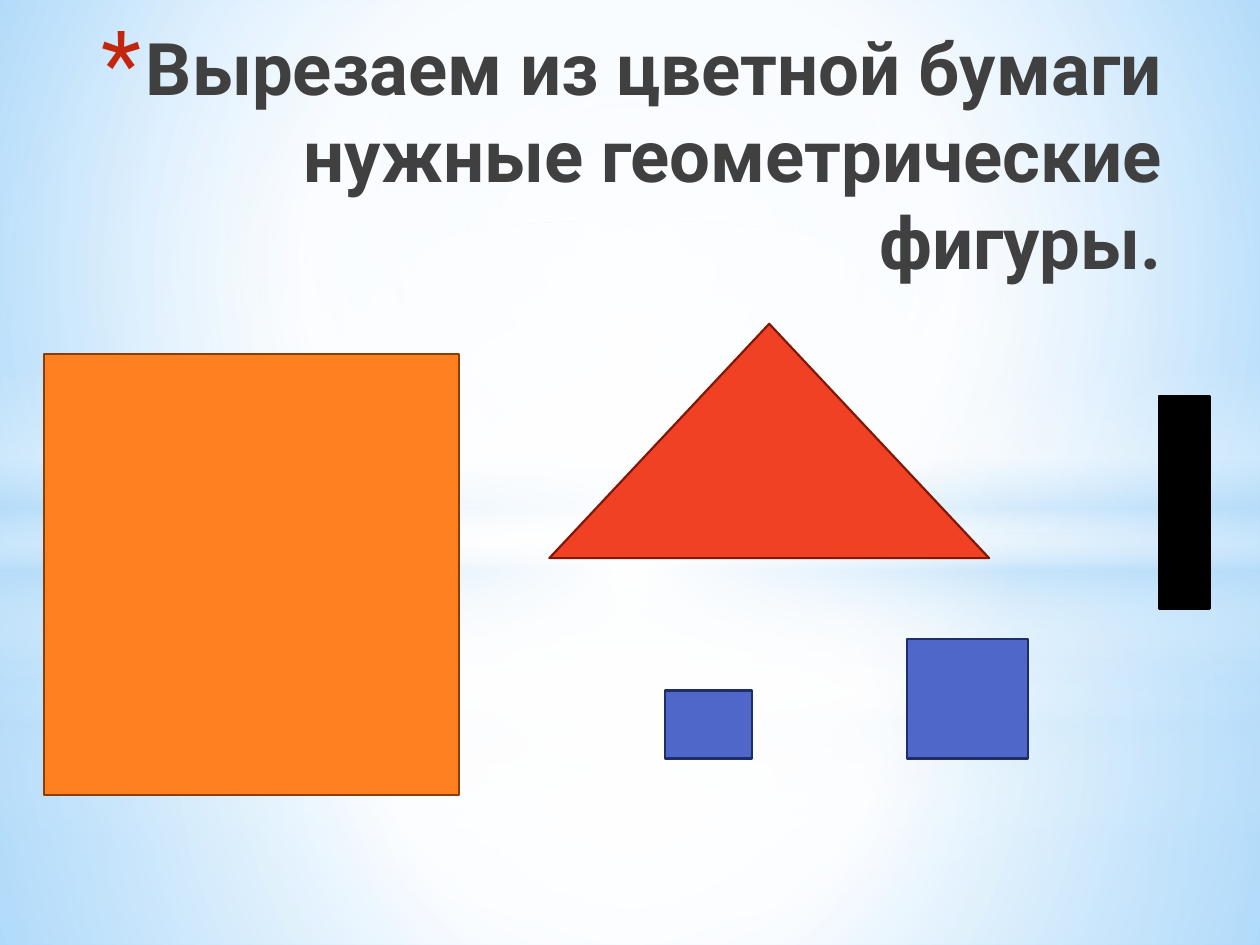
from lxml.etree import SubElement
from pptx import Presentation
from pptx.dml.color import RGBColor as RGB
from pptx.enum.shapes import MSO_SHAPE as Preset
from pptx.enum.text import MSO_ANCHOR as Anchor, PP_ALIGN as Align
from pptx.oxml.ns import qn
from pptx.util import Inches, Pt

TITLE = "Вырезаем из цветной бумаги нужные геометрические фигуры."
TITLE_BOX = (0.56, 0.49, 8.76, 1.81)

THEME = {
    "font": "Roboto", "title_size": 41.4, "title": "404040",
    "bullet": "C3260C", "bullet_percent": 128, "outline": 1.25,
    "orange": ("FF8021", "8B3D02"),
    "red": ("F14124", "821705"),
    "blue": ("4E67C8", "1F2E69"),
    "black": ("000000", "000000"),
}

# Gradient stops: position %, colour, opacity %
CENTRE = (50, 50, 50, 50)
SKY = [(0, "9ED5FF", 100), (60, "FFFFFF", 100), (100, "5BB9FF", 100)]
SKY_FOCUS = (20, 10, 20, 60)
HORIZON = [(0, "FFFFFF", 0), (29, "FFFFFF", 30), (45, "B4DCFA", 40),
           (55, "FFFFFF", 26), (65, "B4DCFA", 60), (100, "FFFFFF", 0)]


def haze(middle, inner, middle_opacity, outer):
    return [(0, "FFFFFF", inner), (middle, "FFFFFF", middle_opacity),
            (100, "B4DCFA", outer)]


def glow(edge):
    return [(0, "FFFFFF", 100), (edge, "FFFFFF", 0)]


# Full-width backdrop layers: preset, top, height, stops, focus (None = vertical)
BACKDROP = [
    (Preset.RECTANGLE, 5.58, 1.92, haze(37, 91, 76, 79), CENTRE),
    (Preset.RECTANGLE, 0, 5.58, haze(48, 89, 62, 79), CENTRE),
    (Preset.RECTANGLE, 4.12, 2.5, HORIZON, None),
    (Preset.OVAL, 1.75, 5.58, glow(56), CENTRE),
    (Preset.RECTANGLE, 4.23, 3.27, haze(37, 92, 77, 80), CENTRE),
    (Preset.RECTANGLE, 0, 4.23, haze(48, 90, 63, 80), CENTRE),
    (Preset.RECTANGLE, 2.9, 2.5, HORIZON, None),
    (Preset.OVAL, 1.75, 5.58, glow(54), CENTRE),
]

# Paper cut-outs: preset, (left, top, width, height), theme colour
CUTOUTS = [
    (Preset.RECTANGLE, (0.35, 2.81, 3.29, 3.5), "orange"),
    (Preset.ISOSCELES_TRIANGLE, (4.36, 2.57, 3.49, 1.86), "red"),
    (Preset.RECTANGLE, (5.28, 5.48, 0.69, 0.54), "blue"),
    (Preset.RECTANGLE, (7.2, 5.07, 0.96, 0.95), "blue"),
    (Preset.RECTANGLE, (9.2, 3.14, 0.4, 1.69), "black"),
]


def add(parent, tag, **attributes):
    return SubElement(parent, qn(tag), {k: str(v) for k, v in attributes.items()})


def apply_gradient(owner, fill, stops, focus):
    """Give the fill, found in the owner's XML, stops with their own opacity."""
    fill.gradient()
    gradient = owner.element.find(".//" + qn("a:gradFill"))
    for child in list(gradient):
        gradient.remove(child)
    stop_list = add(gradient, "a:gsLst")
    for position, colour, opacity in stops:
        stop = add(stop_list, "a:gs", pos=position * 1000)
        paint = add(stop, "a:srgbClr", val=colour)
        if opacity < 100:
            add(paint, "a:alpha", val=opacity * 1000)
    if focus:
        circle = add(gradient, "a:path", path="circle")
        sides = {side: share * 1000 for side, share in zip("ltrb", focus)}
        add(circle, "a:fillToRect", **sides)
    else:
        add(gradient, "a:lin", ang=90 * 60000, scaled=0)


def add_plain_shape(slide, preset, box):
    shape = slide.shapes.add_shape(preset, *map(Inches, box))
    shape.shadow.inherit = False
    return shape


def add_backdrop(slide):
    apply_gradient(slide, slide.background.fill, SKY, SKY_FOCUS)
    for preset, top, height, stops, focus in BACKDROP:
        layer = add_plain_shape(slide, preset, (0, top, 10, height))
        layer.line.fill.background()
        apply_gradient(layer, layer.fill, stops, focus)


def add_title(slide):
    frame = slide.shapes.add_textbox(*map(Inches, TITLE_BOX)).text_frame
    frame.word_wrap = True
    frame.vertical_anchor = Anchor.BOTTOM
    paragraph = frame.paragraphs[0]
    paragraph.alignment = Align.RIGHT
    heading = paragraph.add_run()
    heading.text = TITLE
    font_format = {"name": THEME["font"], "size": Pt(THEME["title_size"]), "bold": True}
    for attribute, value in font_format.items():
        setattr(heading.font, attribute, value)
    heading.font.color.rgb = RGB.from_string(THEME["title"])

    indent = Inches(0.35)
    properties = paragraph._p.get_or_add_pPr()
    properties.set("marL", str(indent))
    properties.set("indent", str(-indent))
    add(add(properties, "a:buClr"), "a:srgbClr", val=THEME["bullet"])
    add(properties, "a:buSzPct", val=THEME["bullet_percent"] * 1000)
    add(properties, "a:buFont", typeface=THEME["font"])
    add(properties, "a:buChar", char="*")


def add_cutouts(slide):
    for preset, box, colour in CUTOUTS:
        cutout = add_plain_shape(slide, preset, box)
        paper, edge = map(RGB.from_string, THEME[colour])
        cutout.fill.solid()
        cutout.fill.fore_color.rgb = paper
        cutout.line.color.rgb = edge
        cutout.line.width = Pt(THEME["outline"])


def main():
    deck = Presentation()
    deck.slide_width, deck.slide_height = Inches(10), Inches(7.5)
    slide = deck.slides.add_slide(deck.slide_layouts[6])
    add_backdrop(slide)
    add_title(slide)
    add_cutouts(slide)
    deck.save("out.pptx")


if __name__ == "__main__":
    main()
